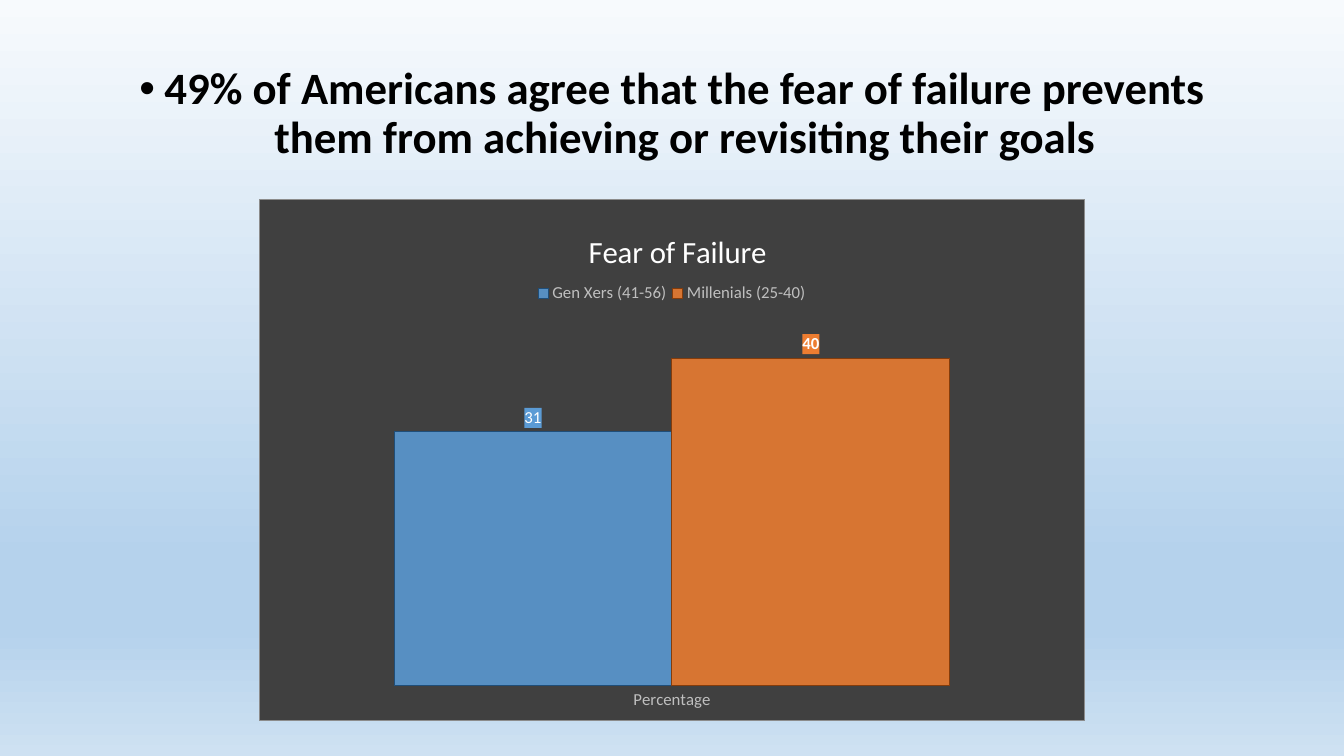
from dataclasses import dataclass

import lxml.etree
import pptx
import pptx.chart.chart
import pptx.chart.data
import pptx.dml.color
import pptx.enum.chart
import pptx.enum.text
import pptx.oxml
import pptx.oxml.ns
import pptx.slide
import pptx.util

PX = 914400 / 100.8
FONT = "Calibri"
COLORS = {
    "black": "000000", "white": "FFFFFF", "panel": "404040",
    "panel_border": "8C8C8C", "muted": "BFBFBF",
    "blue": "5B9BD5", "blue_line": "1F4E79",
    "orange": "ED7D31", "orange_line": "843C0B",
}
BACKGROUND_STOPS = [(0, "F7FAFD"), (74, "B5D2EC"), (83, "B5D2EC"), (100, "CEE1F2")]
HEADING = ("49% of Americans agree that the fear of failure prevents "
           "them from achieving or revisiting their goals")
qn = pptx.oxml.ns.qn


@dataclass
class Box:
    left: int
    top: int
    width: int
    height: int

    def emu(self) -> list[int]:
        return [px(n) for n in (self.left, self.top, self.width, self.height)]


@dataclass
class Generation:
    name: str
    value: int
    color: str
    line: str
    bold_label: bool


GENERATIONS = [
    Generation("Gen Xers (41-56)", 31, "blue", "blue_line", False),
    Generation("Millenials (25-40)", 40, "orange", "orange_line", True),
]
HEADING_BOX = Box(93, 61, 1159, 93)
CHART_BOX = Box(259, 199, 826, 522)
TITLE_BOX = Box(583, 225, 178, 36)
LEGEND_BOX = Box(532, 281, 280, 24)
PLOT_BOX = Box(277, 317, 790, 369)


def px(length: int) -> int:
    return round(length * PX)


def rgb(name: str) -> pptx.dml.color.RGBColor:
    return pptx.dml.color.RGBColor.from_string(COLORS[name])


def set_font(font, size: int, color: str, bold: bool = False) -> None:
    font.name, font.size, font.bold = FONT, pptx.util.Pt(size), bold
    font.color.rgb = rgb(color)


def shape_properties(fill: str, border: str = ""):
    """Build a chart spPr with a solid fill and an optional thin border."""
    line = (f'<a:ln w="6350"><a:solidFill><a:srgbClr val="{COLORS[border]}"/>'
            '</a:solidFill></a:ln>') if border else ""
    return pptx.oxml.parse_xml(
        f'<c:spPr {pptx.oxml.ns.nsdecls("c", "a")}><a:solidFill>'
        f'<a:srgbClr val="{COLORS[fill]}"/></a:solidFill>{line}</c:spPr>')


def place_in_chart(part, box: Box, inner: bool = False, sized: bool = True) -> None:
    """Give a chart part a fixed place, as fractions of the chart."""
    old = part.find(qn("c:layout"))
    if old is not None:
        part.remove(old)
    values = [("xMode", "edge"), ("yMode", "edge"),
              ("x", (box.left - CHART_BOX.left) / CHART_BOX.width),
              ("y", (box.top - CHART_BOX.top) / CHART_BOX.height)]
    if inner:
        values.insert(0, ("layoutTarget", "inner"))
    if sized:
        values += [("w", box.width / CHART_BOX.width),
                   ("h", box.height / CHART_BOX.height)]
    layout = pptx.oxml.parse_xml(f'<c:layout {pptx.oxml.ns.nsdecls("c")}/>')
    manual = lxml.etree.SubElement(layout, qn("c:manualLayout"))
    for tag, value in values:
        lxml.etree.SubElement(manual, qn(f"c:{tag}")).set("val", str(value))
    overlay = part.find(qn("c:overlay"))
    if overlay is None:
        part.insert(0, layout)
    else:
        overlay.addprevious(layout)


def paint_background(slide: pptx.slide.Slide) -> None:
    fill = slide.background.fill
    fill.gradient()
    fill.gradient_angle = 270
    stops = slide.element.find(".//" + qn("a:gsLst"))
    for stop in list(stops):
        stops.remove(stop)
    for percent, color in BACKGROUND_STOPS:
        stop = lxml.etree.SubElement(stops, qn("a:gs"), pos=str(percent * 1000))
        lxml.etree.SubElement(stop, qn("a:srgbClr"), val=color)


def add_heading(slide: pptx.slide.Slide) -> None:
    heading = slide.shapes.title
    heading.left, heading.top, heading.width, heading.height = HEADING_BOX.emu()
    frame = heading.text_frame
    frame.text = HEADING
    frame.word_wrap = True
    frame.auto_size = pptx.enum.text.MSO_AUTO_SIZE.NONE
    frame.vertical_anchor = pptx.enum.text.MSO_ANCHOR.TOP
    paragraph = frame.paragraphs[0]
    paragraph.alignment = pptx.enum.text.PP_ALIGN.CENTER
    paragraph.line_spacing = 0.9
    properties = paragraph._p.get_or_add_pPr()
    properties.set("marL", "228600")
    properties.set("indent", "-228600")
    lxml.etree.SubElement(properties, qn("a:buFont"), typeface="Arial")
    lxml.etree.SubElement(properties, qn("a:buChar"), char="•")
    set_font(paragraph.font, 32, "black", True)


def style_series(chart: pptx.chart.chart.Chart) -> None:
    elements = chart.element.findall(".//" + qn("c:ser"))
    for generation, series, element in zip(GENERATIONS, chart.plots[0].series, elements):
        series.format.fill.solid()
        series.format.fill.fore_color.rgb = rgb(generation.color)
        color = element.find(f'{qn("c:spPr")}/{qn("a:solidFill")}/{qn("a:srgbClr")}')
        lxml.etree.SubElement(color, qn("a:alpha"), val="88000")
        series.format.line.color.rgb = rgb(generation.line)
        series.format.line.width = pptx.util.Pt(0.75)
        labels = series.data_labels
        labels.show_value = True
        labels.position = pptx.enum.chart.XL_LABEL_POSITION.OUTSIDE_END
        set_font(labels.font, 12, "white", generation.bold_label)
        text = element.find(f'{qn("c:dLbls")}/{qn("c:txPr")}')
        text.addprevious(shape_properties(generation.color))


def add_fear_chart(slide: pptx.slide.Slide) -> None:
    data = pptx.chart.data.CategoryChartData()
    data.categories = ["Percentage"]
    for generation in GENERATIONS:
        data.add_series(generation.name, [generation.value])
    chart = slide.shapes.add_chart(
        pptx.enum.chart.XL_CHART_TYPE.COLUMN_CLUSTERED, *CHART_BOX.emu(), data).chart

    # Panel
    set_font(chart.font, 10, "black")
    chart.element.find(qn("c:txPr")).addprevious(
        shape_properties("panel", "panel_border"))

    # Title and legend
    chart.has_title = True
    chart.chart_title.text_frame.text = "Fear of Failure"
    set_font(chart.chart_title.text_frame.paragraphs[0].font, 22, "white")
    chart.has_legend = True
    chart.legend.position = pptx.enum.chart.XL_LEGEND_POSITION.TOP
    chart.legend.include_in_layout = False
    set_font(chart.legend.font, 12, "muted")

    # Axes
    category_axis, value_axis = chart.category_axis, chart.value_axis
    category_axis.major_tick_mark = pptx.enum.chart.XL_TICK_MARK.NONE
    category_axis.format.line.fill.background()
    set_font(category_axis.tick_labels.font, 12, "muted")
    value_axis.minimum_scale, value_axis.maximum_scale = 0, 45
    value_axis.has_major_gridlines = False
    value_axis.visible = False

    # Columns
    plot = chart.plots[0]
    plot.gap_width, plot.overlap, plot.vary_by_categories = 84, 0, False
    style_series(chart)

    # Places of the parts
    body = chart.element.find(qn("c:chart"))
    place_in_chart(body.find(qn("c:title")), TITLE_BOX, sized=False)
    place_in_chart(body.find(qn("c:legend")), LEGEND_BOX)
    place_in_chart(body.find(qn("c:plotArea")), PLOT_BOX, inner=True)


def main() -> None:
    presentation = pptx.Presentation()
    presentation.slide_width, presentation.slide_height = px(1344), px(756)
    slide = presentation.slides.add_slide(presentation.slide_layouts[5])
    paint_background(slide)
    add_heading(slide)
    add_fear_chart(slide)
    presentation.save("out.pptx")


if __name__ == "__main__":
    main()
